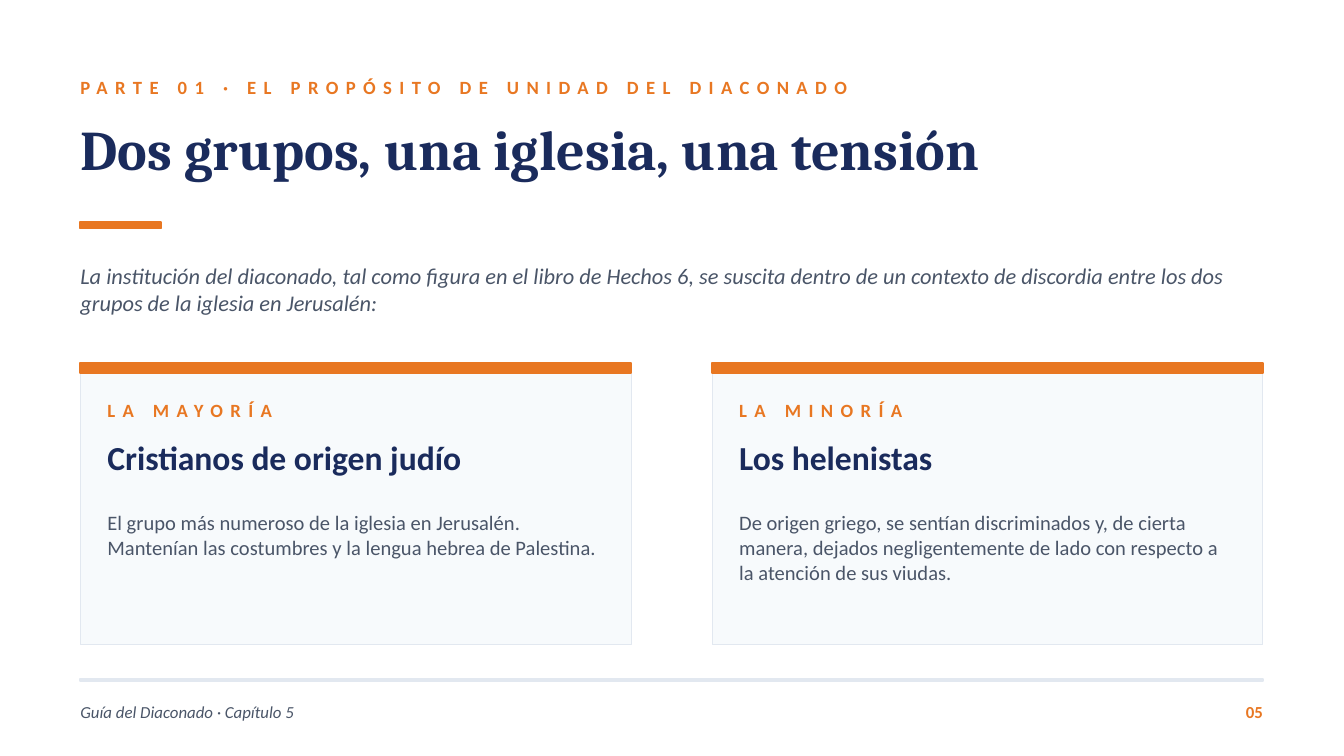
from pptx import Presentation
from pptx.dml.color import RGBColor
from pptx.enum import shapes, text
from pptx.util import Cm, Pt

ORANGE = RGBColor(0xE8, 0x77, 0x22)
NAVY = RGBColor(0x1A, 0x2B, 0x5C)
SLATE = RGBColor(0x4A, 0x55, 0x68)
MIST = RGBColor(0xF7, 0xFA, 0xFC)
RULE = RGBColor(0xE2, 0xE8, 0xF0)

MARGIN = 1.52
CONTENT_WIDTH = 22.35
CARD_TOP = 6.86
CARD_WIDTH = 10.41
CARD_PADDING = 0.51
CARD_PITCH = CONTENT_WIDTH - CARD_WIDTH

GROUPS = [
    ("LA MAYORÍA", "Cristianos de origen judío",
     "El grupo más numeroso de la iglesia en Jerusalén. "
     "Mantenían las costumbres y la lengua hebrea de Palestina."),
    ("LA MINORÍA", "Los helenistas",
     "De origen griego, se sentían discriminados y, de cierta manera, "
     "dejados negligentemente de lado con respecto a la atención de sus viudas."),
]


def write(box, wording, size, color, font="Calibri", bold=False, italic=False,
          spacing=0, middle=False, align=text.PP_ALIGN.LEFT):
    frame = box.text_frame
    frame.word_wrap = True
    frame.auto_size = text.MSO_AUTO_SIZE.NONE
    frame.margin_left = frame.margin_right = 0
    frame.margin_top = frame.margin_bottom = 0
    frame.vertical_anchor = text.MSO_ANCHOR.MIDDLE if middle else text.MSO_ANCHOR.TOP
    para = frame.paragraphs[0]
    para.alignment = align
    span = para.add_run()
    span.text = wording
    span.font.name = font
    span.font.size = Pt(size)
    span.font.bold = bold
    span.font.italic = italic
    span.font.color.rgb = color
    if spacing:
        span._r.get_or_add_rPr().set("spc", str(spacing * 100))


def add_text(page, left, top, width, height, wording, size, color, **style):
    box = page.shapes.add_textbox(Cm(left), Cm(top), Cm(width), Cm(height))
    write(box, wording, size, color, **style)


def add_eyebrow(page, left, top, width, wording):
    add_text(page, left, top, width, 0.76, wording, 10, ORANGE,
             bold=True, spacing=4, middle=True)


def add_bar(page, left, top, width, height, fill, line=None, weight=1):
    bar = page.shapes.add_shape(shapes.MSO_SHAPE.RECTANGLE,
                                Cm(left), Cm(top), Cm(width), Cm(height))
    bar.shadow.inherit = False
    bar.fill.solid()
    bar.fill.fore_color.rgb = fill
    bar.line.color.rgb = line or fill
    bar.line.width = Pt(weight)


def set_title(page, wording):
    title = page.shapes.title
    title.left, title.top = Cm(MARGIN), Cm(2.16)
    title.width, title.height = Cm(22.86), Cm(1.78)
    write(title, wording, 30, NAVY, font="Cambria", bold=True)


def add_card(page, left, label, heading, body):
    inner_left = left + CARD_PADDING
    inner_width = CARD_WIDTH - 2 * CARD_PADDING
    add_bar(page, left, CARD_TOP, CARD_WIDTH, 5.33, MIST, line=RULE, weight=0.5)
    add_bar(page, left, CARD_TOP, CARD_WIDTH, 0.2, ORANGE)
    add_eyebrow(page, inner_left, CARD_TOP + 0.51, inner_width, label)
    add_text(page, inner_left, CARD_TOP + 1.4, inner_width, 1.27,
             heading, 18, NAVY, bold=True)
    add_text(page, inner_left, CARD_TOP + 2.79, inner_width, 2.41, body, 11, SLATE)


def add_footer(page, wording, number):
    add_bar(page, MARGIN, 12.83, CONTENT_WIDTH, 0.05, RULE)
    add_text(page, MARGIN, 13.08, 15.24, 0.76, wording, 9, SLATE,
             italic=True, middle=True)
    add_text(page, MARGIN + CONTENT_WIDTH - 1.27, 13.08, 1.27, 0.76, number, 9, ORANGE,
             bold=True, middle=True, align=text.PP_ALIGN.RIGHT)


def main():
    deck = Presentation()
    deck.slide_width, deck.slide_height = Cm(25.4), Cm(14.29)
    page = deck.slides.add_slide(deck.slide_layouts.get_by_name("Title Only"))

    add_eyebrow(page, MARGIN, 1.27, 20.32,
                "PARTE 01 · EL PROPÓSITO DE UNIDAD DEL DIACONADO")
    set_title(page, "Dos grupos, una iglesia, una tensión")
    add_bar(page, MARGIN, 4.19, 1.52, 0.13, ORANGE)
    add_text(page, MARGIN, 4.95, 22.86, 1.52,
             "La institución del diaconado, tal como figura en el libro de Hechos 6, "
             "se suscita dentro de un contexto de discordia entre los dos grupos "
             "de la iglesia en Jerusalén:", 12, SLATE, italic=True)
    for index, group in enumerate(GROUPS):
        add_card(page, MARGIN + index * CARD_PITCH, *group)
    add_footer(page, "Guía del Diaconado · Capítulo 5", "05")

    deck.save("out.pptx")


if __name__ == "__main__":
    main()
